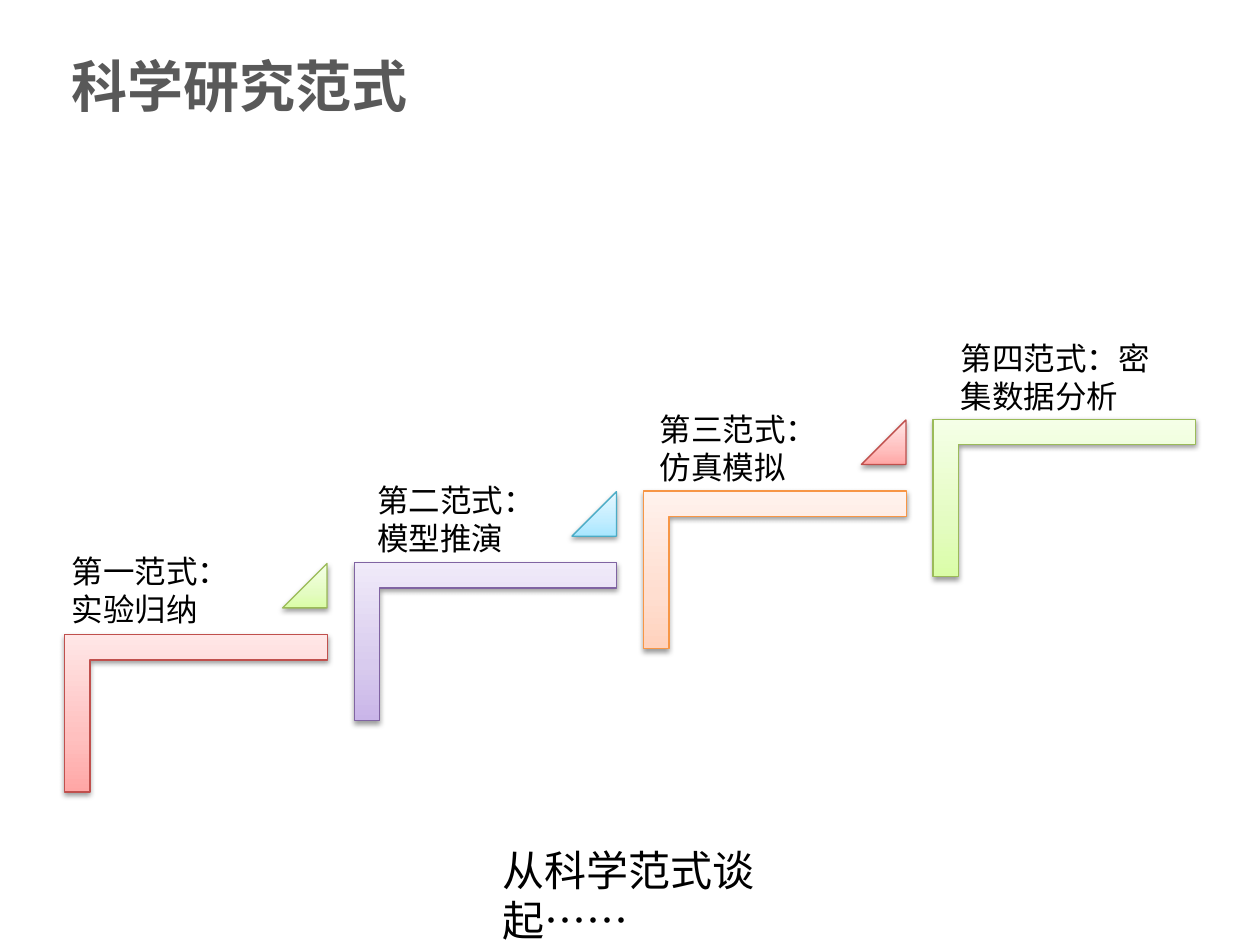
from copy import deepcopy

from lxml import etree
from pptx import Presentation
from pptx.dml.color import RGBColor
from pptx.enum.shapes import MSO_SHAPE
from pptx.oxml import parse_xml
from pptx.oxml.ns import nsdecls, qn
from pptx.util import Pt

CORNER = MSO_SHAPE.CORNER
TRIANGLE = MSO_SHAPE.ISOSCELES_TRIANGLE

BLACK = RGBColor(0x00, 0x00, 0x00)
GRAY = RGBColor(0x59, 0x59, 0x59)

# Each theme: outline, then gradient colours from bottom to top
RED = [RGBColor(0xC0, 0x50, 0x4D), RGBColor(0xFF, 0xA6, 0xA5),
       RGBColor(0xFF, 0xC0, 0xBF), RGBColor(0xFF, 0xE7, 0xE7)]
GREEN = [RGBColor(0x9B, 0xBB, 0x59), RGBColor(0xDA, 0xFD, 0xA7),
         RGBColor(0xE4, 0xFC, 0xC2), RGBColor(0xF5, 0xFF, 0xE7)]
PURPLE = [RGBColor(0x80, 0x64, 0xA2), RGBColor(0xC9, 0xB5, 0xE8),
          RGBColor(0xD8, 0xCB, 0xEE), RGBColor(0xF0, 0xEA, 0xF9)]
BLUE = [RGBColor(0x4B, 0xAC, 0xC6), RGBColor(0xA7, 0xE6, 0xFF),
        RGBColor(0xC1, 0xED, 0xFF), RGBColor(0xE7, 0xF8, 0xFF)]
ORANGE = [RGBColor(0xF7, 0x96, 0x46), RGBColor(0xFF, 0xD2, 0xBD),
          RGBColor(0xFF, 0xDE, 0xD0), RGBColor(0xFF, 0xF2, 0xED)]

SHADOW = (f'<a:outerShdw {nsdecls("a")} blurRad="{Pt(3.1)}" dist="{Pt(1.6)}" '
          'dir="5400000" rotWithShape="0"><a:srgbClr val="000000">'
          '<a:alpha val="38000"/></a:srgbClr></a:outerShdw>')


class SlideBuilder:
    cjk_font = "Noto Sans CJK SC"
    stops = (0, 0.35, 1)

    def __init__(self, slide):
        self.slide = slide

    def shape(self, kind, left, top, width, height, theme, adjust, rotation=0):
        sp = self.slide.shapes.add_shape(
            kind, Pt(left), Pt(top), Pt(width), Pt(height))
        sp.rotation = rotation
        for i, value in enumerate(adjust):
            sp.adjustments[i] = value
        outline, *colors = theme
        sp.line.color.rgb = outline
        sp.line.width = Pt(0.75)
        self.gradient(sp, colors)
        sp.shadow.inherit = False
        effects = sp._element.spPr.find(qn("a:effectLst"))
        effects.append(parse_xml(SHADOW))

    def gradient(self, sp, colors):
        sp.fill.gradient()
        sp.fill.gradient_angle = 90
        grad = sp._element.spPr.find(qn("a:gradFill"))
        grad.set("rotWithShape", "0")  # keep it vertical on turned shapes
        stop_list = grad.find(qn("a:gsLst"))
        stop_list.insert(1, deepcopy(stop_list[0]))
        for stop, position, color in zip(
                sp.fill.gradient_stops, self.stops, colors):
            stop.position = position
            stop.color.rgb = color

    def text(self, text, left, top, width, height, size,
             font=cjk_font, color=BLACK, bold=False):
        box = self.slide.shapes.add_textbox(
            Pt(left), Pt(top), Pt(width), Pt(height))
        tf = box.text_frame
        tf.word_wrap = True
        tf.text = text
        r = tf.paragraphs[0].runs[0]
        r.font.size = Pt(size)
        r.font.name = font
        r.font.bold = bold
        r.font.color.rgb = color
        ea = etree.SubElement(r._r.get_or_add_rPr(), qn("a:ea"))
        ea.set("typeface", self.cjk_font)


def main():
    prs = Presentation()
    prs.slide_width, prs.slide_height = Pt(720), Pt(540)
    s = SlideBuilder(prs.slides.add_slide(prs.slide_layouts[6]))

    # Staircase: each step lies further right and higher
    step_x, step_y = 165.4, 41
    corners = [RED, PURPLE, ORANGE, GREEN]
    triangles = [GREEN, BLUE, RED]
    for i, theme in enumerate(corners):
        dx, dy = i * step_x, i * step_y
        s.shape(CORNER, 67 + dx, 332.6 - dy, 90, 150, theme,
                (0.161, 0.161), rotation=90)
        if i < len(triangles):
            s.shape(TRIANGLE, 161.5 + dx, 322 - dy, 25.4, 25.4,
                    triangles[i], (1,))

    # Title
    s.text("科学研究范式", 34, 26, 400, 45, 32, color=GRAY, bold=True)

    # Step labels
    labels = [
        ("第一范式：实验归纳", 34, 311.8, 114.5),
        ("第二范式：模型推演", 208.4, 271.4, 111.6),
        ("第三范式：仿真模拟", 370, 230.6, 111.6),
        ("第四范式：密集数据分析", 541.9, 190, 133.2),
    ]
    for label, left, top, width in labels:
        s.text(label, left, top, width, 51, 18)

    # Closing line
    s.text("从科学范式谈起……", 280, 479, 217.4, 36, 24, font="Arial")

    prs.save("out.pptx")


if __name__ == "__main__":
    main()
